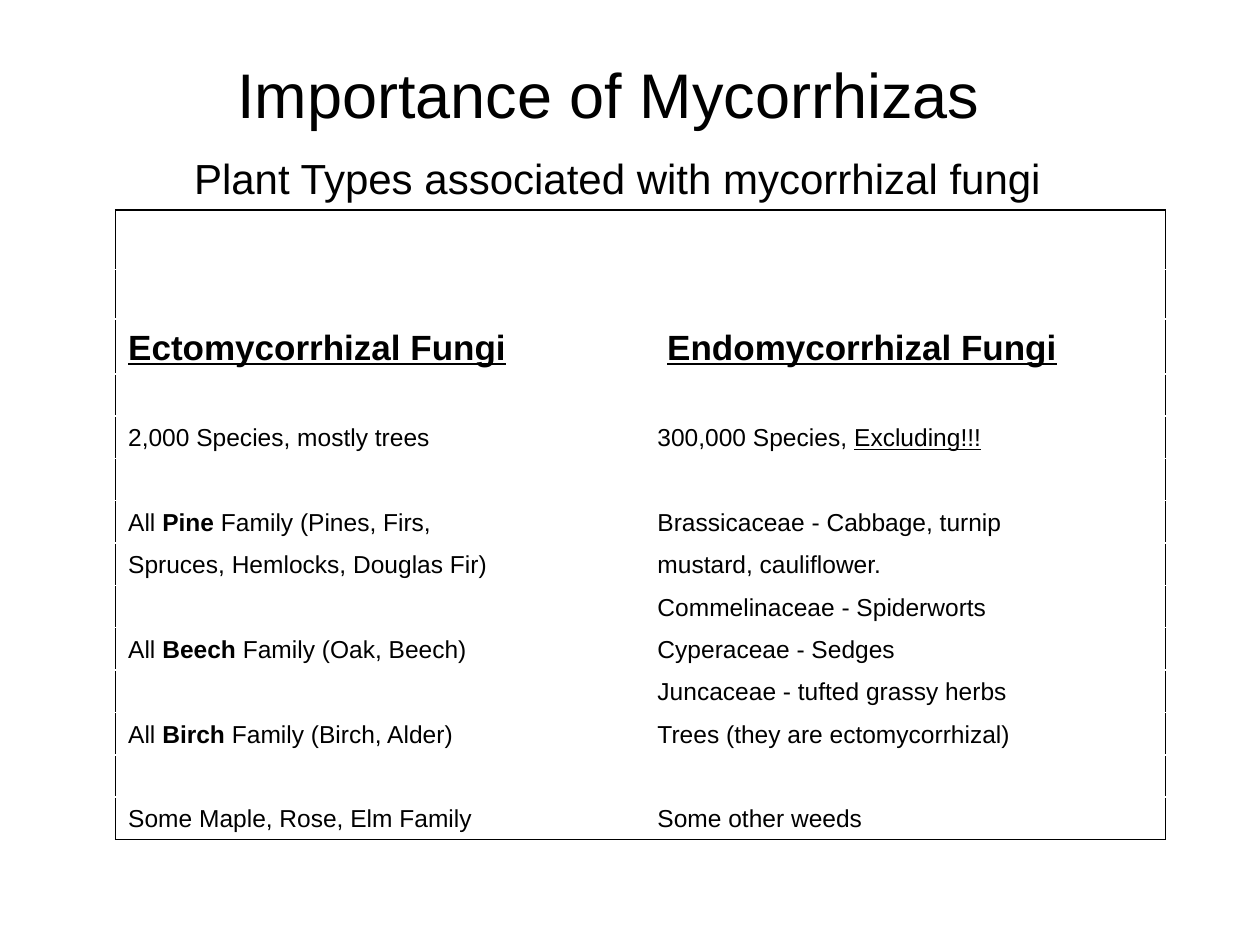
from dataclasses import dataclass

from pptx import Presentation
from pptx import util as u
from pptx.dml.color import RGBColor
from pptx.enum import text
from pptx.oxml import parse_xml
from pptx.oxml.ns import nsdecls


@dataclass(frozen=True)
class Theme:
    face: str = "Arial"
    ink: str = "000000"
    title: int = 36
    sub: int = 24
    head: int = 20
    body: int = 14
    line: int = 1
    hang: float = 0.95


class Deck:
    def __init__(self, theme):
        self.theme = theme
        self.prs = Presentation()
        self.prs.slide_width = u.Cm(25.4)
        self.prs.slide_height = u.Cm(19.05)
        self.slide = self.prs.slides.add_slide(self.prs.slide_layouts[6])

    def run(self, para, words, size, mark=""):
        run = para.add_run()
        run.text = words
        font = run.font
        font.name, font.size = self.theme.face, u.Pt(size)
        font.bold, font.underline = "b" in mark, "u" in mark
        font.color.rgb = RGBColor.from_string(self.theme.ink)

    def title(self, box, main, sub):
        frame = self.slide.shapes.add_textbox(*map(u.Cm, box)).text_frame
        frame.word_wrap = True
        frame.vertical_anchor = text.MSO_ANCHOR.MIDDLE
        para = frame.paragraphs[0]
        para.alignment = text.PP_ALIGN.CENTER
        self.run(para, main, self.theme.title)
        para.add_line_break()
        self.run(para, " ", self.theme.title)
        self.run(para, sub, self.theme.sub)

    def edge(self, cell, sides):
        props = cell._tc.get_or_add_tcPr()
        for side in sides:
            props.append(parse_xml(
                f'<a:ln{side} {nsdecls("a")} w="{u.Pt(self.theme.line)}">'
                f'<a:solidFill><a:srgbClr val="{self.theme.ink}"/></a:solidFill>'
                f'</a:ln{side}>'))

    def fill(self, cell, runs, size):
        cell.fill.background()
        cell.vertical_anchor = text.MSO_ANCHOR.BOTTOM
        cell.margin_top = cell.margin_bottom = u.Cm(0.13 if runs else 0)
        para = cell.text_frame.paragraphs[0]
        if runs:
            props = para._p.get_or_add_pPr()
            hang = u.Cm(self.theme.hang)
            props.set("marL", str(hang))
            props.set("indent", str(-hang))
        for words, mark in runs:
            self.run(para, words, size, mark)

    def table(self, spot, cols, highs, rows, head):
        left, top = map(u.Cm, spot)
        grid = self.slide.shapes.add_table(
            len(rows), len(cols), left, top,
            u.Cm(sum(cols)), u.Cm(sum(highs))).table
        grid.first_row = grid.horz_banding = False
        for col, wide in zip(grid.columns, cols):
            col.width = u.Cm(wide)
        for row, high in zip(grid.rows, highs):
            row.height = u.Cm(high)
        grid.cell(0, 0).merge(grid.cell(0, len(cols) - 1))
        for r, row in enumerate(rows):
            for c, runs in enumerate(row):
                cell = grid.cell(r, c)
                sides = {"L": c == 0,
                         "R": c == len(cols) - 1 or cell.is_merge_origin,
                         "T": r == 0, "B": r == len(rows) - 1}
                self.edge(cell, [s for s, on in sides.items() if on])
                size = self.theme.head if r == head else self.theme.body
                self.fill(cell, runs, size)

    def save(self):
        self.prs.save("out.pptx")


def plain(words):
    return [(words, "")]


def family(name, trees):
    return [("All ", ""), (name, "b"), (f" Family ({trees}", "")]


ROWS = [
    ([], []),
    ([], []),
    ([("Ectomycorrhizal Fungi", "bu")],
     [(" ", "b"), ("Endomycorrhizal Fungi", "bu")]),
    ([], []),
    (plain("2,000 Species, mostly trees"),
     [("300,000 Species, ", ""), ("Excluding!!!", "u")]),
    ([], []),
    (family("Pine", "Pines, Firs,"), plain("Brassicaceae - Cabbage, turnip")),
    (plain("Spruces, Hemlocks, Douglas Fir)"), plain("mustard, cauliflower.")),
    ([], plain("Commelinaceae - Spiderworts")),
    (family("Beech", "Oak, Beech)"), plain("Cyperaceae - Sedges")),
    ([], plain("Juncaceae - tufted grassy herbs")),
    (family("Birch", "Birch, Alder)"),
     plain("Trees (they are ectomycorrhizal)")),
    ([], []),
    (plain("Some Maple, Rose, Elm Family"), plain("Some other weeds")),
]


def main():
    deck = Deck(Theme())
    deck.title((0.84, 1.06, 22.86, 3.18), "Importance of Mycorrhizas",
               "Plant Types associated with mycorrhizal fungi")
    deck.table((2.33, 4.23), (10.67, 10.5),
               [1.2, 1, 1.08] + [0.85] * 11, ROWS, head=2)
    deck.save()


if __name__ == "__main__":
    main()
